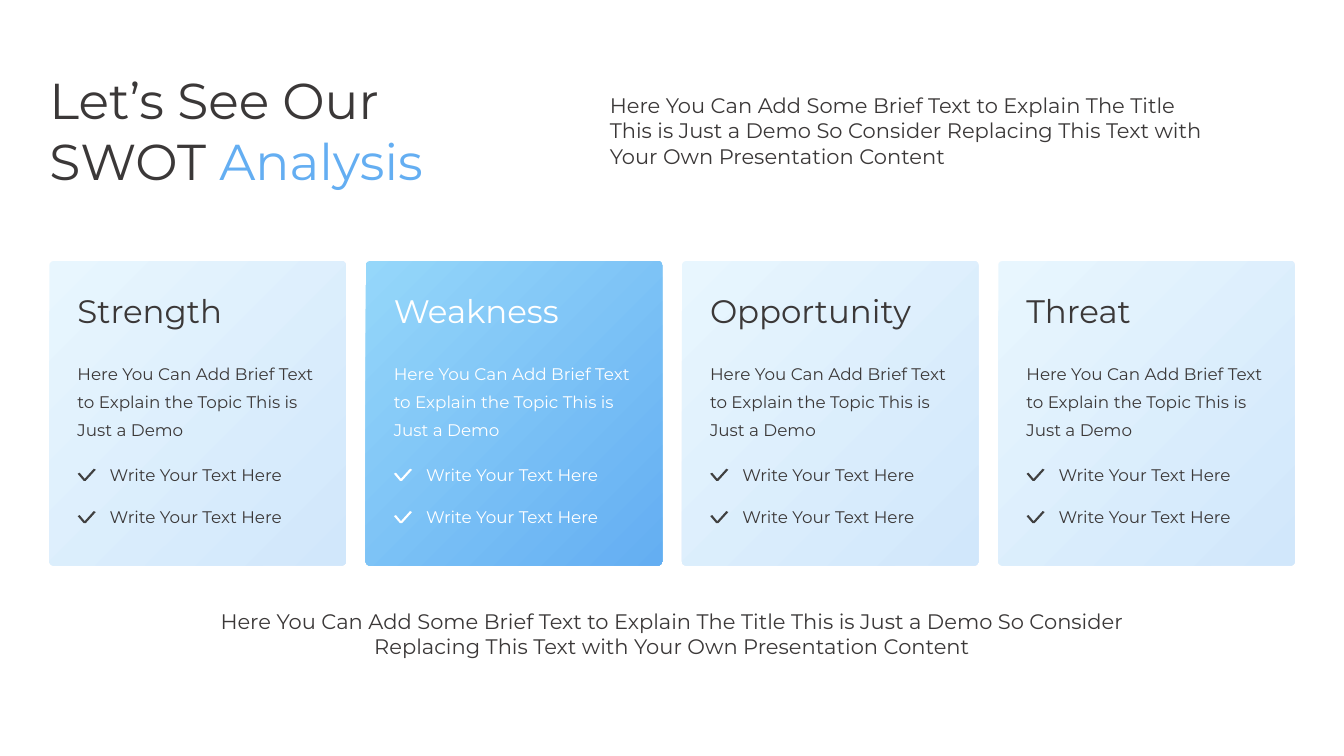
from copy import deepcopy

from lxml.etree import SubElement
from pptx import Presentation
from pptx.dml.color import RGBColor
from pptx.enum.shapes import MSO_SHAPE as Kind
from pptx.enum.text import MSO_ANCHOR as Anchor, MSO_AUTO_SIZE as Fit, PP_ALIGN as Align
from pptx.oxml.ns import qn
from pptx.util import Inches, Pt

FONT = "Montserrat"
INK = {
    "text": "3B3838", "tick": "404040", "white": "FFFFFF", "blue": "64AEF2",
    "sky": "95D7FA", "pale": "D1E7FB", "mist": "E8F6FE",
}
TITLE = ("Let’s See Our\vSWOT ", "Analysis")
BRIEF = ("Here You Can Add Some Brief Text to Explain The Title This is Just a Demo "
         "So Consider Replacing This Text with Your Own Presentation Content")
TOPIC = "Here You Can Add Brief Text to Explain the Topic This is Just a Demo"
ITEMS = ["Write Your Text Here", "Write Your Text Here"]

# heading, heading width, text colour, tick colour, gradient from bottom right to top left
PLAIN = ("text", "tick", ("pale", "mist"))
BOLD = ("white", "white", ("blue", "sky"))
CARDS = [
    ("Strength", 1.74, PLAIN),
    ("Weakness", 2.02, BOLD),
    ("Opportunity", 2.34, PLAIN),
    ("Threat", 1.34, PLAIN),
]
LEFT, TOP, WIDE, HIGH, STEP = 0.49, 2.59, 2.94, 3.02, 3.137
ROUND = 0.04
ROW = 0.42
TICK = [(0, 0.05), (0.02, 0.04), (0.07, 0.1), (0.16, 0),
        (0.18, 0.01), (0.08, 0.12), (0.06, 0.12)]


def color(name):
    return RGBColor.from_string(INK[name])


def style(run, size, ink):
    run.font.name, run.font.size = FONT, Pt(size)
    run.font.color.rgb = color(ink)


def write(shapes, text, box, size, ink="text", wrap=True, align=Align.LEFT, pitch=None):
    frame = shapes.add_textbox(*map(Inches, box)).text_frame
    frame.word_wrap = wrap
    frame.auto_size = Fit.SHAPE_TO_FIT_TEXT
    frame.text = text
    para = frame.paragraphs[0]
    para.alignment = align
    if pitch:
        para.line_spacing = Pt(pitch)
    style(para.runs[0], size, ink)


def glow(shape, inks):
    """Fill with a radial gradient centred on the bottom right corner."""
    shape.fill.gradient()
    for stop, ink in zip(shape.fill.gradient_stops, inks):
        stop.color.rgb = color(ink)
    grad = shape._element.spPr.find(qn("a:gradFill"))
    grad.remove(grad.find(qn("a:lin")))
    ring = SubElement(grad, qn("a:path"), {"path": "circle"})
    SubElement(ring, qn("a:fillToRect"), {"l": "100000", "t": "100000"})


def bare(shape):
    shape.shadow.inherit = False
    shape.line.fill.background()


def tick(shapes, left, top, ink):
    dots = [(Inches(left + x), Inches(top + y)) for x, y in TICK]
    pen = shapes.build_freeform(*dots[0])
    pen.add_line_segments(dots[1:], close=True)
    mark = pen.convert_to_shape()
    mark.fill.solid()
    mark.fill.fore_color.rgb = color(ink)
    bare(mark)


def card(slide, left, head, width, look):
    ink, mark, inks = look
    shapes = slide.shapes.add_group_shape().shapes
    panel = shapes.add_shape(Kind.ROUNDED_RECTANGLE, *map(Inches, (left, TOP, WIDE, HIGH)))
    panel.adjustments[0] = ROUND / WIDE
    glow(panel, inks)
    bare(panel)
    write(shapes, head, (left + 0.18, TOP + 0.25, width, 0.49), 23.2, ink, wrap=False)
    write(shapes, TOPIC, (left + 0.18, TOP + 0.89, 2.65, 0.91), 12, ink, pitch=20)
    for i, item in enumerate(ITEMS):
        top = TOP + 1.97 + i * ROW
        tick(shapes, left + 0.28, top + 0.09, mark)
        write(shapes, item, (left + 0.5, top, 2.16, 0.3), 12, ink)


def headline(slide):
    title = slide.shapes.title
    title.left, title.top, title.width, title.height = map(Inches, (0.39, 0.64, 4.68, 1.31))
    frame = title.text_frame
    frame.word_wrap = True
    frame.auto_size = Fit.SHAPE_TO_FIT_TEXT
    frame.vertical_anchor = Anchor.TOP
    para = frame.paragraphs[0]
    para.text = TITLE[0]
    para.alignment = Align.LEFT
    para.add_run().text = TITLE[1]
    for run in para.runs:
        style(run, 36, "text")
    para.runs[-1].font.color.rgb = color("blue")
    # the line break needs the same size as the words around it
    para._p.find(qn("a:br")).append(deepcopy(para.runs[0]._r.find(qn("a:rPr"))))


def main():
    deck = Presentation()
    deck.slide_width, deck.slide_height = Inches(13.33), Inches(7.5)
    slide = deck.slides.add_slide(deck.slide_layouts[5])
    headline(slide)
    write(slide.shapes, BRIEF, (5.95, 0.87, 6.23, 0.86), 15)
    for i, (head, width, look) in enumerate(CARDS):
        card(slide, LEFT + i * STEP, head, width, look)
    write(slide.shapes, BRIEF, (1.8, 5.99, 9.73, 0.61), 15, align=Align.CENTER)
    deck.save("out.pptx")


if __name__ == "__main__":
    main()
